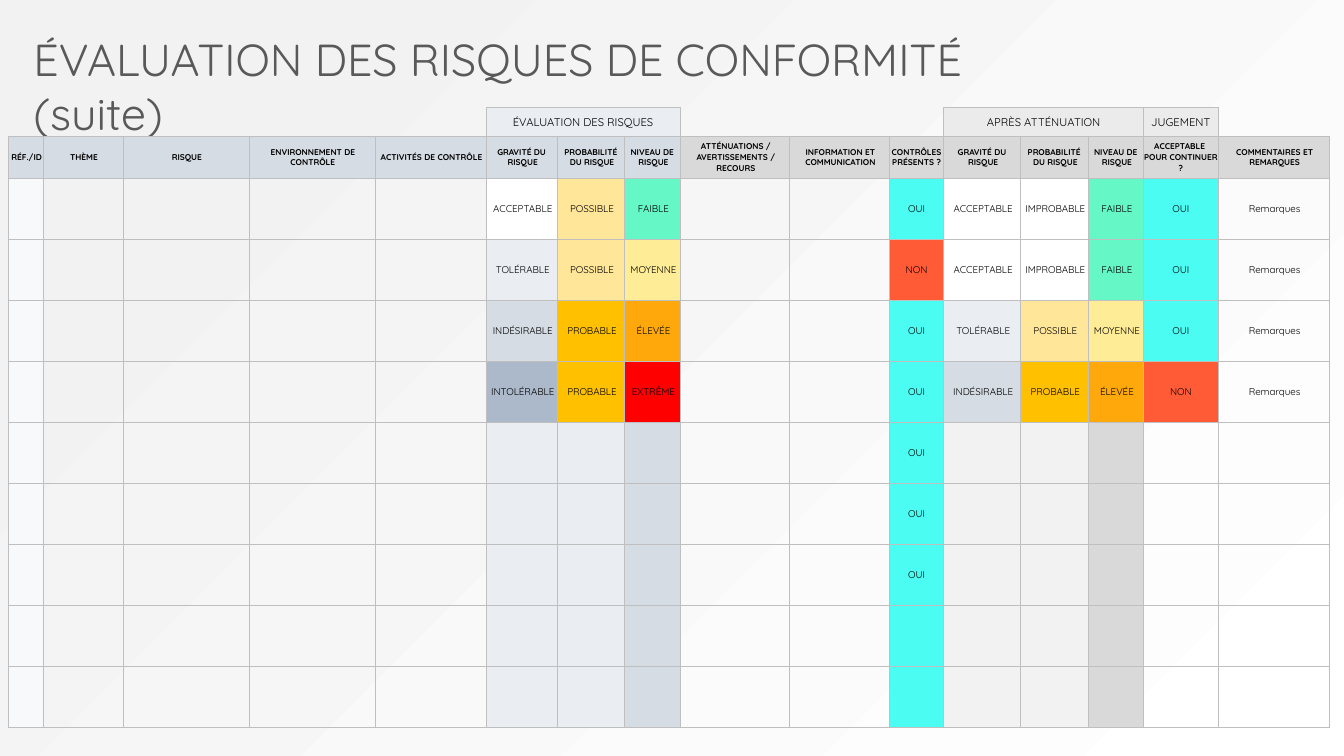
"""Build the compliance risk assessment slide."""
from lxml import etree
from pptx import Presentation
from pptx.dml import color as c
from pptx.enum import text as t
from pptx.oxml import ns
from pptx.util import Pt

FACE = "Quicksand"
GREY = "BFBFBF"
WIDTHS = [25, 57, 90, 90, 79.5, 50.9, 48.1, 39.7, 78, 71.4,
          38.9, 54.9, 48.2, 39.8, 53, 79.5]
HEIGHTS = [20.3, 30.2] + [43.6] * 9
TIGHT = (10, 14)
BANDS = [(5, 7, "ÉVALUATION DES RISQUES", "EAEEF3"),
         (11, 13, "APRÈS ATTÉNUATION", "EBEBEB"),
         (14, 14, "JUGEMENT", "EBEBEB")]
RATING = ["GRAVITÉ DU \nRISQUE", "PROBABILITÉ \nDU RISQUE", "NIVEAU DE \nRISQUE"]
HEADS = ["RÉF./ID", "THÈME", "RISQUE", "ENVIRONNEMENT DE CONTRÔLE",
         "ACTIVITÉS DE CONTRÔLE", *RATING,
         "ATTÉNUATIONS / AVERTISSEMENTS / RECOURS",
         "INFORMATION ET COMMUNICATION", "CONTRÔLES PRÉSENTS ?", *RATING,
         "ACCEPTABLE \nPOUR CONTINUER ?", "COMMENTAIRES ET REMARQUES"]
RISKS = [
    ["ACCEPTABLE", "POSSIBLE", "FAIBLE", "OUI",
     "ACCEPTABLE", "IMPROBABLE", "FAIBLE", "OUI", "Remarques"],
    ["TOLÉRABLE", "POSSIBLE", "MOYENNE", "NON",
     "ACCEPTABLE", "IMPROBABLE", "FAIBLE", "OUI", "Remarques"],
    ["INDÉSIRABLE", "PROBABLE", "ÉLEVÉE", "OUI",
     "TOLÉRABLE", "POSSIBLE", "MOYENNE", "OUI", "Remarques"],
    ["INTOLÉRABLE", "PROBABLE", "EXTRÊME", "OUI",
     "INDÉSIRABLE", "PROBABLE", "ÉLEVÉE", "NON", "Remarques"],
]
RATED = [5, 6, 7, 10, 11, 12, 13, 14, 15]
FILLS = {"ACCEPTABLE": "FFFFFF", "TOLÉRABLE": "EAEEF3", "INDÉSIRABLE": "D6DCE4",
         "INTOLÉRABLE": "ACB9CA", "IMPROBABLE": "FFFFFF", "POSSIBLE": "FFE699",
         "PROBABLE": "FFC000", "FAIBLE": "65F7C6", "MOYENNE": "FFEC97",
         "ÉLEVÉE": "FFA80B", "EXTRÊME": "FF0000", "OUI": "4BFCF2", "NON": "FF5B37"}
BLANKS = {0: "F7F9FB", 5: "EAEEF3", 6: "EAEEF3", 7: "D6DCE4", 10: "4BFCF2",
          11: "F2F2F2", 12: "F2F2F2", 13: "D9D9D9"}


def rgb(code):
    """Turn a hex string into a colour."""
    return c.RGBColor.from_string(code)


def put(item, form):
    """Set every attribute of a format dict."""
    for name, value in form.items():
        setattr(item, name, value)


def write(para, words, size, code, bold=False):
    """Fill a paragraph with formatted text."""
    para.text = words
    for run in para.runs:
        put(run.font, {"name": FACE, "size": Pt(size), "bold": bold})
        run.font.color.rgb = rgb(code)


def edge(cell, widths):
    """Draw the left, right, top and bottom borders; zero means none."""
    props = cell._tc.get_or_add_tcPr()
    for side, width in zip("LRTB", widths):
        line = etree.SubElement(props, ns.qn(f"a:ln{side}"), w=str(Pt(width)))
        kind = "a:solidFill" if width else "a:noFill"
        paint = etree.SubElement(line, ns.qn(kind))
        if width:
            etree.SubElement(paint, ns.qn("a:srgbClr"), val=GREY)


def style(cell, words, size, fill, left=0, bold=False, lines=(0.5,) * 4):
    """Format one table cell."""
    edge(cell, lines)
    put(cell, {"margin_left": Pt(left), "margin_right": 0, "margin_top": 0,
               "margin_bottom": 0, "vertical_anchor": t.MSO_ANCHOR.MIDDLE})
    if fill:
        cell.fill.solid()
        cell.fill.fore_color.rgb = rgb(fill)
    else:
        cell.fill.background()
    para = cell.text_frame.paragraphs[0]
    para.alignment = t.PP_ALIGN.CENTER
    if words:
        write(para, words, size, "000000", bold)
    else:
        para._p.get_or_add_endParaRPr().set("sz", str(size * 100))


def bands(grid):
    """Fill the top row with its group labels."""
    boxed = {col for first, last, *_ in BANDS for col in range(first, last + 1)}
    labels = {first: (words, fill) for first, _, words, fill in BANDS}
    for col in range(len(WIDTHS)):
        words, fill = labels.get(col, ("", None))
        inside = col in boxed
        lines = (0.5 if inside or col - 1 in boxed else 0,
                 0.5 if inside or col + 1 in boxed else 0,
                 1 if inside else 0, 0.5)
        style(grid.cell(0, col), words, 8, fill, lines=lines)
    for first, last, *_ in BANDS:
        if last > first:
            grid.cell(0, first).merge(grid.cell(0, last))


def body(grid):
    """Fill the header row and the risk rows."""
    for col, words in enumerate(HEADS):
        left = 0 if col in TIGHT else 1.4
        style(grid.cell(1, col), words, 6, "D6DCE4" if col < 8 else "D9D9D9",
              left, True)
        for row in range(2, len(HEIGHTS)):
            label = ""
            if row < 6 and col in RATED:
                label = RISKS[row - 2][RATED.index(col)]
            elif row < 9 and col == 10:
                label = "OUI"
            fill = FILLS.get(label) if label else BLANKS.get(col)
            style(grid.cell(row, col), label, 7, fill, left)


def table(slide):
    """Add the risk table."""
    frame = slide.shapes.add_table(len(HEIGHTS), len(WIDTHS), Pt(5.8), Pt(77),
                                   Pt(sum(WIDTHS)), Pt(sum(HEIGHTS)))
    grid = frame.table
    put(grid, {"first_row": False, "horz_banding": False})
    for col, width in zip(grid.columns, WIDTHS):
        col.width = Pt(width)
    for row, height in zip(grid.rows, HEIGHTS):
        row.height = Pt(height)
    bands(grid)
    body(grid)


def title(slide, words):
    """Place and format the slide title."""
    shape = slide.shapes.title
    put(shape, {"left": Pt(16.6), "top": Pt(19.4),
                "width": Pt(696), "height": Pt(46)})
    put(shape.text_frame, {"word_wrap": True, "auto_size": t.MSO_AUTO_SIZE.NONE,
                           "vertical_anchor": t.MSO_ANCHOR.TOP})
    para = shape.text_frame.paragraphs[0]
    para.alignment = t.PP_ALIGN.LEFT
    write(para, words, 32, "595959")


def shade(slide):
    """Give the slide its diagonal gradient."""
    fill = slide.background.fill
    fill.gradient()
    fill.gradient_angle = 135
    for stop, code, place in zip(fill.gradient_stops, ("FFFFFF", "F2F2F2"), (0, 0.87)):
        stop.color.rgb = rgb(code)
        stop.position = place


def main():
    """Build and save the deck."""
    deck = Presentation()
    put(deck, {"slide_width": Pt(960), "slide_height": Pt(540)})
    slide = deck.slides.add_slide(deck.slide_layouts[5])
    shade(slide)
    table(slide)
    title(slide, "ÉVALUATION DES RISQUES DE CONFORMITÉ (suite)")
    deck.save("out.pptx")


if __name__ == "__main__":
    main()
